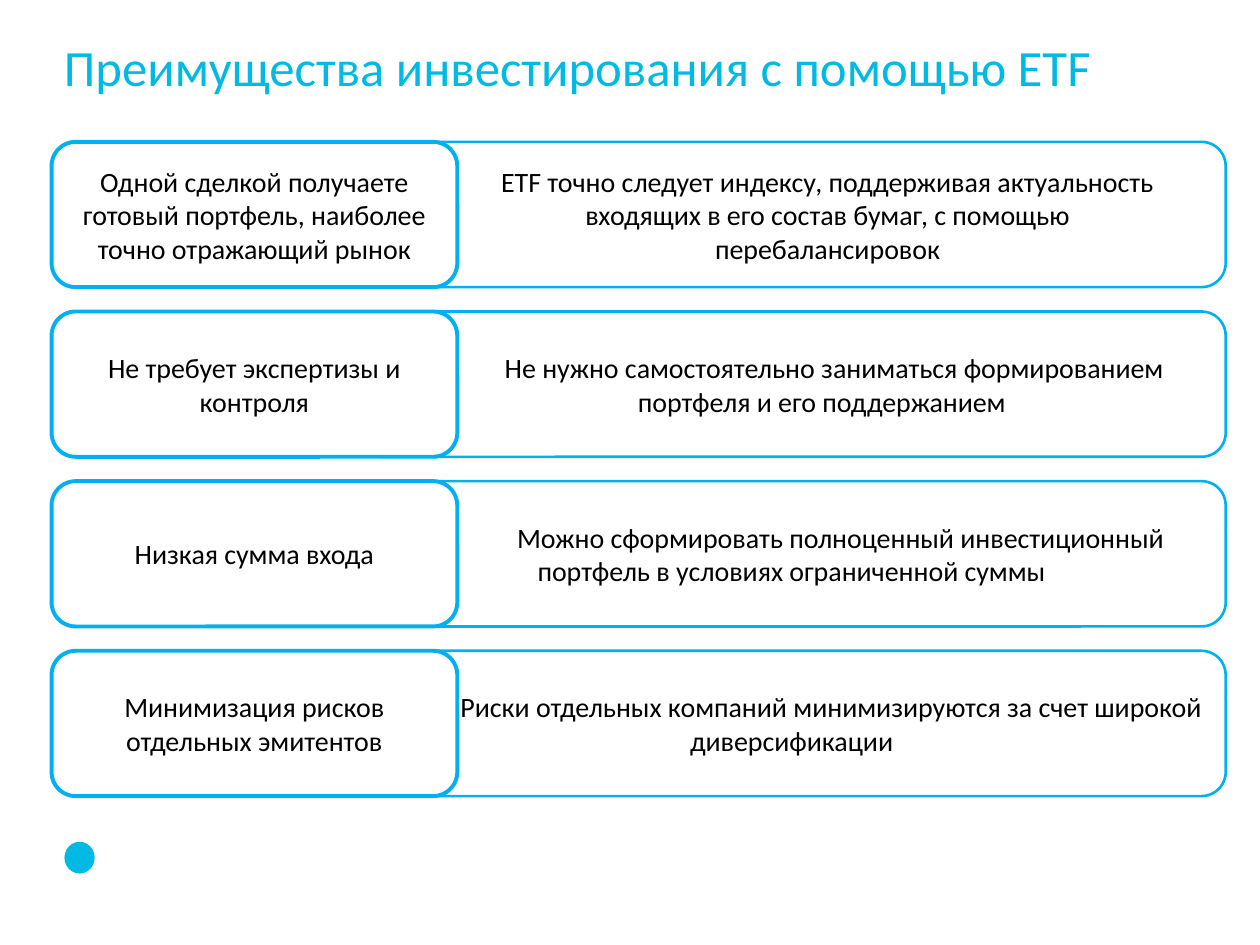
from dataclasses import dataclass

from pptx import Presentation
from pptx import util as u
from pptx.dml.color import RGBColor
from pptx.enum import shapes, text


@dataclass(frozen=True)
class Theme:
    font: str = "Calibri"
    title_color: RGBColor = RGBColor(0x00, 0xBA, 0xE3)
    outline: RGBColor = RGBColor(0x00, 0xB0, 0xF0)
    paper: RGBColor = RGBColor(0xFF, 0xFF, 0xFF)
    ink: RGBColor = RGBColor(0x00, 0x00, 0x00)
    title_size: int = 29
    body_size: int = 16


class SlideBuilder:
    def __init__(self, slide, theme):
        self.slide = slide
        self.theme = theme

    def add_run(self, paragraph, wording, size, color):
        run = paragraph.add_run()
        run.text = wording
        run.font.name = self.theme.font
        run.font.size = u.Pt(size)
        run.font.color.rgb = color

    def title(self, wording, left, top, width, height):
        shape = self.slide.shapes.add_textbox(
            u.Cm(left), u.Cm(top), u.Cm(width), u.Cm(height))
        frame = shape.text_frame
        frame.word_wrap = True
        frame.vertical_anchor = text.MSO_ANCHOR.MIDDLE
        paragraph = frame.paragraphs[0]
        paragraph.line_spacing = 0.9
        self.add_run(paragraph, wording, self.theme.title_size, self.theme.title_color)

    def card(self, wording, left, top, width, height, line_width,
             margins=(0.25, 0.25), first_indent=0):
        shape = self.slide.shapes.add_shape(
            shapes.MSO_SHAPE.ROUNDED_RECTANGLE,
            u.Cm(left), u.Cm(top), u.Cm(width), u.Cm(height))
        shape.shadow.inherit = False
        shape.fill.solid()
        shape.fill.fore_color.rgb = self.theme.paper
        shape.line.color.rgb = self.theme.outline
        shape.line.width = u.Pt(line_width)
        frame = shape.text_frame
        frame.word_wrap = True
        frame.vertical_anchor = text.MSO_ANCHOR.MIDDLE
        frame.margin_left, frame.margin_right = (u.Cm(margin) for margin in margins)
        paragraph = frame.paragraphs[0]
        paragraph.alignment = text.PP_ALIGN.CENTER
        if first_indent:
            properties = paragraph._p.get_or_add_pPr()
            properties.set("marL", "0")
            properties.set("indent", str(u.Cm(first_indent)))
        self.add_run(paragraph, wording, self.theme.body_size, self.theme.ink)

    def emblem(self, left, top, width, height):
        shape = self.slide.shapes.add_shape(
            shapes.MSO_SHAPE.OVAL, u.Cm(left), u.Cm(top), u.Cm(width), u.Cm(height))
        shape.shadow.inherit = False
        shape.fill.solid()
        shape.fill.fore_color.rgb = self.theme.title_color
        shape.line.fill.background()


# Benefit, explanation, side margins and first-line indent of the explanation (cm)
BENEFITS = [
    ("Одной сделкой получаете готовый портфель, наиболее точно отражающий рынок",
     "ETF точно следует индексу, поддерживая актуальность входящих в его состав "
     "бумаг, с помощью перебалансировок", (2.36, 0.91), -0.3),
    ("Не требует экспертизы и контроля",
     "Не нужно самостоятельно заниматься формированием портфеля и его поддержанием",
     (2.16, 0.94), 0.5),
    ("Низкая сумма входа",
     "Можно сформировать полноценный инвестиционный портфель в условиях "
     "ограниченной суммы", (0.25, 0.25), 1.98),
    ("Минимизация рисков отдельных эмитентов",
     "Риски отдельных компаний минимизируются за счет широкой диверсификации",
     (0.25, 0.25), 1.6),
]
LEFT, FIRST_TOP = 1.04, 2.86
ROW_HEIGHT, ROW_STEP = 2.93, 3.42


def main():
    presentation = Presentation()
    presentation.slide_width = u.Cm(25.4)
    presentation.slide_height = u.Cm(19.05)
    slide = presentation.slides.add_slide(presentation.slide_layouts[6])
    builder = SlideBuilder(slide, Theme())

    # Heading
    builder.title("Преимущества инвестирования с помощью ETF", LEFT, 0.76, 23.83, 1.32)

    # Rows: the benefit card overlaps the explanation card
    for row, (benefit, explanation, margins, first_indent) in enumerate(BENEFITS):
        top = FIRST_TOP + row * ROW_STEP
        builder.card(explanation, 7.21, top, 17.5, ROW_HEIGHT, 1.5, margins, first_indent)
        builder.card(benefit, LEFT, top, 8.18, ROW_HEIGHT, 2.25)

    # Footer emblem
    builder.emblem(1.3, 16.97, 0.61, 0.64)

    presentation.save("out.pptx")


if __name__ == "__main__":
    main()
